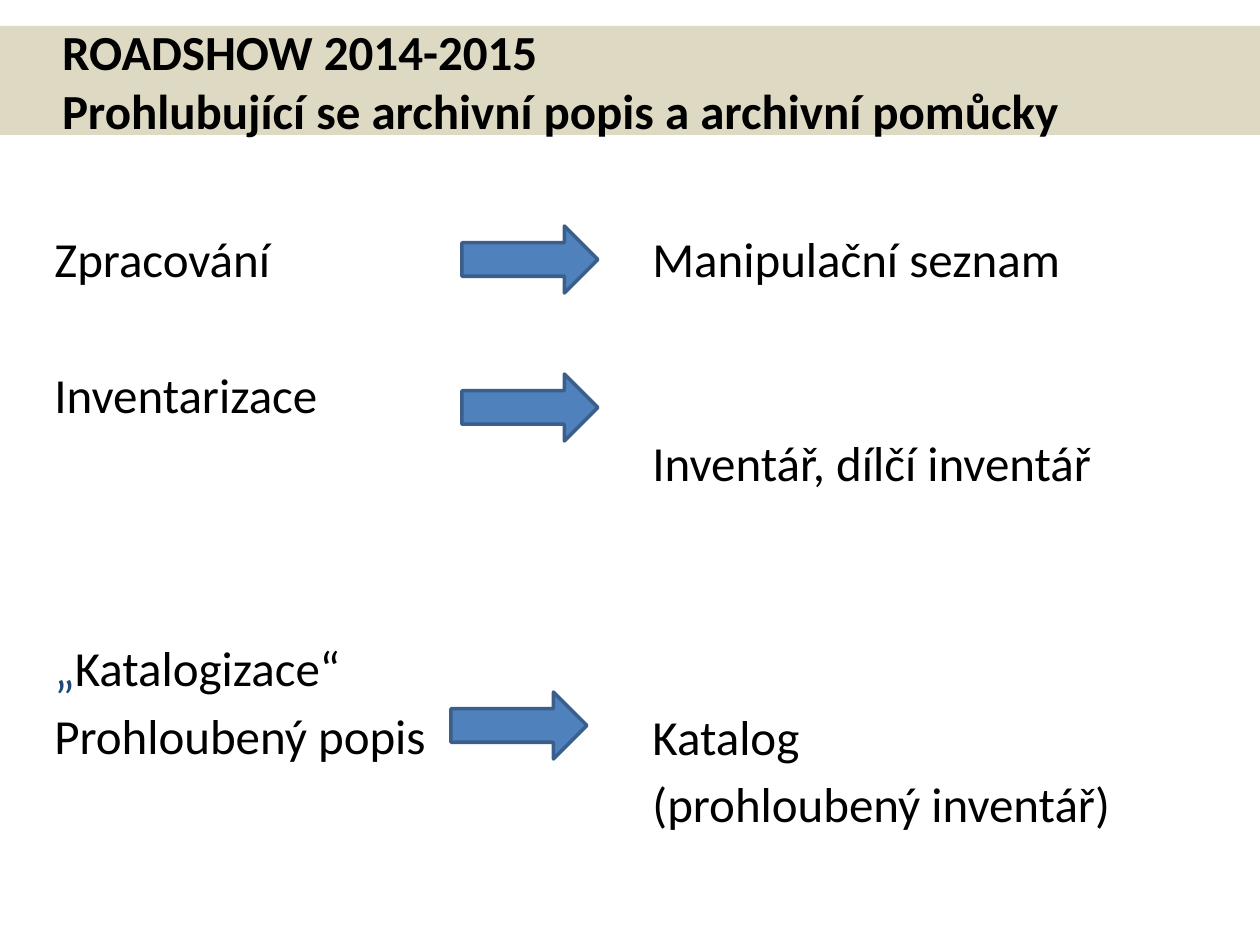
from dataclasses import dataclass

from pptx import Presentation
from pptx.dml.color import RGBColor
from pptx.enum.shapes import MSO_SHAPE
from pptx.enum.text import MSO_ANCHOR, MSO_AUTO_SIZE, PP_ALIGN
from pptx.slide import Slide
from pptx.text.text import _Run
from pptx.util import Emu, Pt

PX_PER_INCH = 126


@dataclass(frozen=True)
class Theme:
    font: str = "Calibri"
    text_size: float = 28
    row_gap: float = 5
    row_pitch: float = 39.2
    arrow_line: float = 2
    text: RGBColor = RGBColor(0x00, 0x00, 0x00)
    quote: RGBColor = RGBColor(0x1F, 0x49, 0x7D)
    band: RGBColor = RGBColor(0xDD, 0xD9, 0xC3)
    arrow_fill: RGBColor = RGBColor(0x4F, 0x81, 0xBD)
    arrow_edge: RGBColor = RGBColor(0x3A, 0x5F, 0x8C)


@dataclass(frozen=True)
class Box:
    left: int
    top: int
    width: int
    height: int

    def emu(self) -> tuple[Emu, Emu, Emu, Emu]:
        return px(self.left), px(self.top), px(self.width), px(self.height)


@dataclass(frozen=True)
class Entry:
    """A line of a column, set on a numbered row of the shared row grid."""
    row: int
    wording: tuple[str, ...]


@dataclass(frozen=True)
class Column:
    box: Box
    entries: tuple[Entry, ...]


THEME = Theme()
TITLE = "ROADSHOW 2014-2015\vProhlubující se archivní popis a archivní pomůcky"
TITLE_BOX = Box(0, 26, 1260, 109)
OPENING_QUOTE = "„"

ACTIVITIES = Column(Box(42, 222, 577, 650), (
    Entry(0, ("Zpracování",)),
    Entry(2, ("Inventarizace",)),
    Entry(6, (OPENING_QUOTE, "Katalogizace“")),
    Entry(7, ("Prohloubený popis",)),
))
FINDING_AIDS = Column(Box(640, 222, 599, 650), (
    Entry(0, ("Manipulační seznam",)),
    Entry(3, ("Inventář, dílčí inventář",)),
    Entry(7, ("Katalog",)),
    Entry(8, ("(prohloubený inventář)",)),
))
ARROWS = (
    Box(462, 226, 136, 67),
    Box(462, 374, 136, 67),
    Box(451, 692, 136, 67),
)


def px(length: int) -> Emu:
    return Emu(round(length * 914400 / PX_PER_INCH))


def format_run(run: _Run, color: RGBColor, bold: bool = False) -> None:
    run.font.name = THEME.font
    run.font.size = Pt(THEME.text_size)
    run.font.bold = bold
    run.font.color.rgb = color


def set_title(slide: Slide) -> None:
    title = slide.shapes.title
    title.left, title.top, title.width, title.height = TITLE_BOX.emu()
    title.fill.solid()
    title.fill.fore_color.rgb = THEME.band
    frame = title.text_frame
    frame.text = TITLE
    frame.word_wrap = True
    frame.auto_size = MSO_AUTO_SIZE.NONE
    frame.vertical_anchor = MSO_ANCHOR.MIDDLE
    frame.margin_left = px(62)
    paragraph = frame.paragraphs[0]
    paragraph.alignment = PP_ALIGN.LEFT
    for run in paragraph.runs:
        format_run(run, THEME.text, bold=True)


def add_column(slide: Slide, column: Column) -> None:
    """Skipped rows become space before the next entry."""
    frame = slide.shapes.add_textbox(*column.box.emu()).text_frame
    frame.word_wrap = True
    previous_row = None
    for entry in column.entries:
        if previous_row is None:
            paragraph = frame.paragraphs[0]
        else:
            paragraph = frame.add_paragraph()
            skipped = entry.row - previous_row - 1
            paragraph.space_before = Pt(round(THEME.row_gap + skipped * THEME.row_pitch, 1))
        for piece in entry.wording:
            run = paragraph.add_run()
            run.text = piece
            format_run(run, THEME.quote if piece == OPENING_QUOTE else THEME.text)
        previous_row = entry.row


def add_arrow(slide: Slide, box: Box) -> None:
    arrow = slide.shapes.add_shape(MSO_SHAPE.RIGHT_ARROW, *box.emu())
    arrow.shadow.inherit = False
    arrow.fill.solid()
    arrow.fill.fore_color.rgb = THEME.arrow_fill
    arrow.line.color.rgb = THEME.arrow_edge
    arrow.line.width = Pt(THEME.arrow_line)


def main() -> None:
    presentation = Presentation()
    presentation.slide_width, presentation.slide_height = px(1260), px(945)
    slide = presentation.slides.add_slide(presentation.slide_layouts.get_by_name("Title Only"))
    set_title(slide)
    for column in (ACTIVITIES, FINDING_AIDS):
        add_column(slide, column)
    for box in ARROWS:
        add_arrow(slide, box)
    presentation.save("out.pptx")


if __name__ == "__main__":
    main()
